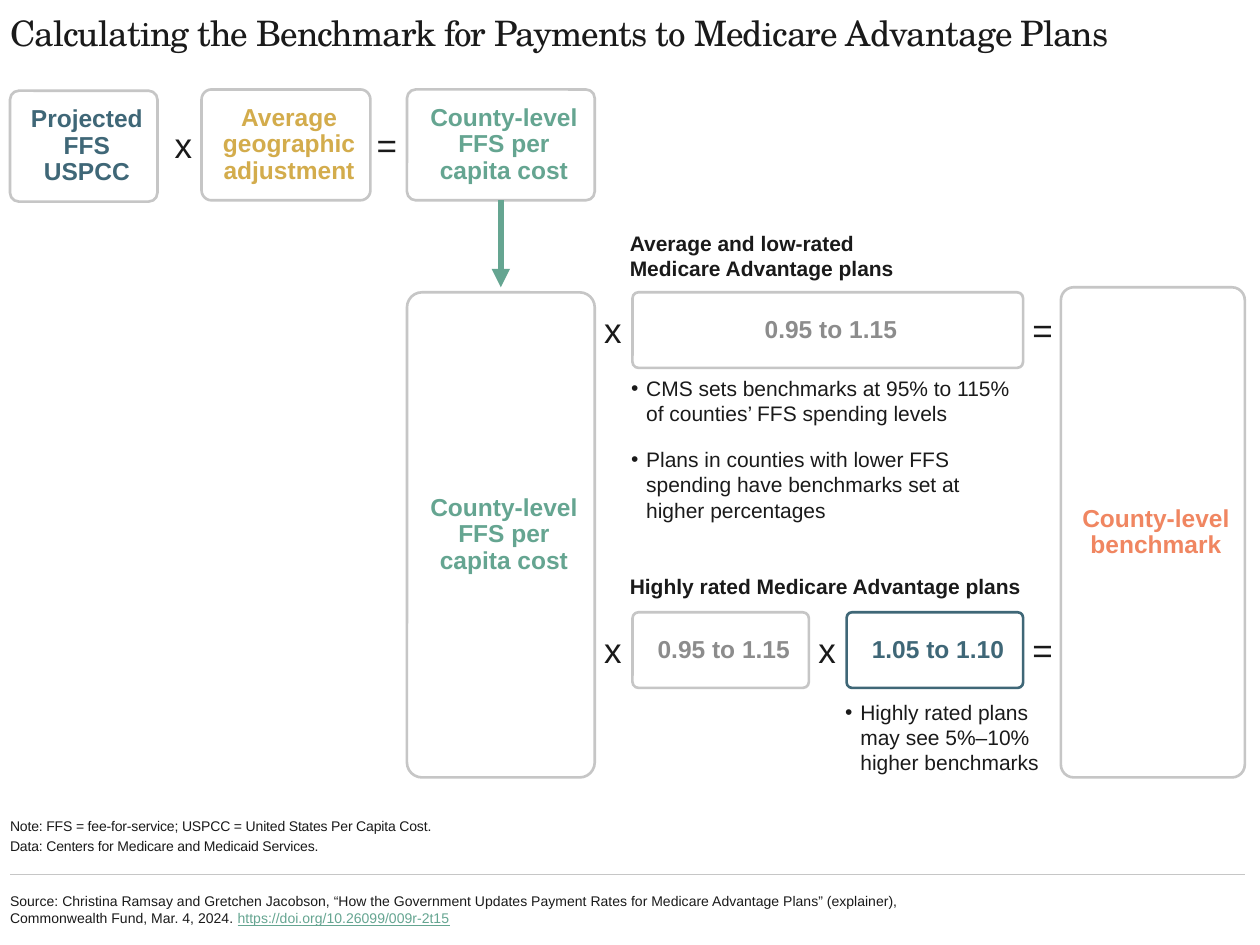
from lxml.etree import SubElement
from pptx import Presentation
from pptx.dml.color import RGBColor
from pptx.enum.shapes import MSO_CONNECTOR, MSO_SHAPE
from pptx.enum.text import MSO_ANCHOR, MSO_AUTO_SIZE, PP_ALIGN
from pptx.oxml.ns import qn
from pptx.util import Inches, Pt

INK = RGBColor(0x1A, 0x1A, 0x1A)
WHITE = RGBColor(0xFF, 0xFF, 0xFF)
RULE = RGBColor(0xC6, 0xC6, 0xC6)
GRAY = RGBColor(0x8C, 0x8C, 0x8C)
BLUE = RGBColor(0x3F, 0x67, 0x77)
GOLD = RGBColor(0xD3, 0xAC, 0x4C)
GREEN = RGBColor(0x65, 0xA5, 0x91)
ORANGE = RGBColor(0xF0, 0x86, 0x61)

LEFT, FULL_WIDTH = 0.08, 9.8
NO_MARGINS = (0, 0, 0, 0)
TEXT_MARGINS = (0.1, 0.05, 0.1, 0.05)
BOX_MARGINS = (0.12, 0.07, 0.07, 0.07)


def write(shape, texts, size, color=INK, bold=False, align=PP_ALIGN.LEFT,
          margins=TEXT_MARGINS, anchor=MSO_ANCHOR.TOP, font="Arial",
          spacing=0, bullet=False, paragraph_format=None):
    """Fill a shape with one paragraph per text and format them all."""
    frame = shape.text_frame
    left, top, right, bottom = (Inches(margin) for margin in margins)
    frame_format = {
        "word_wrap": True, "auto_size": MSO_AUTO_SIZE.NONE,
        "vertical_anchor": anchor, "margin_left": left, "margin_top": top,
        "margin_right": right, "margin_bottom": bottom,
    }
    for name, value in frame_format.items():
        setattr(frame, name, value)
    for index, text in enumerate(texts):
        paragraph = frame.paragraphs[0] if index == 0 else frame.add_paragraph()
        for name, value in {"alignment": align, **(paragraph_format or {})}.items():
            if not (index == 0 and name == "space_before"):
                setattr(paragraph, name, value)
        if bullet:
            properties = paragraph._p.get_or_add_pPr()
            properties.set("marL", str(Inches(0.13)))
            properties.set("indent", str(Inches(-0.12)))
            SubElement(properties, qn("a:buFont")).set("typeface", "Arial")
            SubElement(properties, qn("a:buChar")).set("char", "•")
        run = paragraph.add_run()
        run.text = text
        for name, value in {"name": font, "size": Pt(size), "bold": bold}.items():
            setattr(run.font, name, value)
        run.font.color.rgb = color
        if spacing:
            run._r.get_or_add_rPr().set("spc", str(round(spacing * 100)))


def add_line(start, end, color, width):
    """Draw a straight line without a shadow."""
    line = slide.shapes.add_connector(
        MSO_CONNECTOR.STRAIGHT, *(Inches(value) for value in (*start, *end)))
    line.line.color.rgb = color
    line.line.width = Pt(width)
    SubElement(line._element.spPr, qn("a:effectLst"))
    return line


presentation = Presentation()
presentation.slide_width = Inches(10)
presentation.slide_height = Inches(7.5)
slide = presentation.slides.add_slide(presentation.slide_layouts[5])

# Title
title = slide.shapes.title
title_place = {"left": LEFT, "top": 0.09, "width": FULL_WIDTH, "height": 0.47}
for name, value in title_place.items():
    setattr(title, name, Inches(value))
write(title, ["Calculating the Benchmark for Payments to Medicare Advantage Plans"],
      20, font="TeX Gyre Schola", spacing=-0.5, margins=NO_MARGINS)

# Formula boxes: place, corner, border, text, text color
COUNTY_COST = "County-level FFS per capita cost"
boxes = [
    ((LEFT, 0.72, 1.17, 0.88), 0.08, RULE, "Projected FFS USPCC", BLUE),
    ((1.6, 0.71, 1.34, 0.88), 0.09, RULE, "Average geographic adjustment", GOLD),
    ((3.23, 0.71, 1.49, 0.88), 0.08, RULE, COUNTY_COST, GREEN),
    ((3.23, 2.32, 1.49, 3.85), 0.08, RULE, COUNTY_COST, GREEN),
    ((5.02, 2.32, 3.1, 0.6), 0.08, RULE, "0.95 to 1.15", GRAY),
    ((5.02, 4.86, 1.4, 0.6), 0.08, RULE, "0.95 to 1.15", GRAY),
    ((6.72, 4.86, 1.4, 0.6), 0.07, BLUE, "1.05 to 1.10", BLUE),
    ((8.42, 2.28, 1.46, 3.89), 0.07, RULE, "County-level benchmark", ORANGE),
]
box_shapes = []
for place, corner, border, text, color in boxes:
    box = slide.shapes.add_shape(
        MSO_SHAPE.ROUNDED_RECTANGLE, *(Inches(value) for value in place))
    box.adjustments[0] = corner
    box.shadow.inherit = False
    box.fill.solid()
    box.fill.fore_color.rgb = WHITE
    box.line.color.rgb = border
    box.line.width = Pt(1.5)
    write(box, [text], 14, color, bold=True, align=PP_ALIGN.CENTER,
          margins=BOX_MARGINS, anchor=MSO_ANCHOR.MIDDLE,
          paragraph_format={"line_spacing": 0.9})
    box_shapes.append(box)

# Arrow from the county cost down to the next step
cost_box = box_shapes[2]
arrow = add_line((3.98, 1.59), (3.98, 2.28), GREEN, 3.5)
arrow.begin_connect(cost_box, 2)
arrow.end_x = cost_box.left + cost_box.width // 2
SubElement(arrow.line._get_or_add_ln(), qn("a:tailEnd")).set("type", "triangle")

# Operators between the boxes
operators = [
    ("x", 1.15, 0.93, 0.61), ("=", 2.82, 0.93, 0.5),
    ("x", 4.56, 2.4, 0.61), ("=", 7.97, 2.4, 0.61),
    ("x", 4.56, 4.94, 0.61), ("x", 6.26, 4.94, 0.61), ("=", 7.97, 4.94, 0.61),
]
for symbol, left, top, width in operators:
    operator = slide.shapes.add_textbox(
        Inches(left), Inches(top), Inches(width), Inches(0.44))
    write(operator, [symbol], 20, align=PP_ALIGN.CENTER)

# Headings and bullets
BULLET = {"bullet": True, "paragraph_format": {"space_after": Pt(12)}}
HEADING = {"bold": True}
captions = [
    ((4.9, 1.78, 2.68, 0.5), HEADING,
     ["Average and low-rated Medicare Advantage plans"]),
    ((4.9, 2.93, 3.22, 1.28), BULLET,
     ["CMS sets benchmarks at 95% to 115% of counties’ FFS spending levels",
      "Plans in counties with lower FFS spending have benchmarks set at "
      "higher percentages"]),
    ((4.9, 4.5, 3.48, 0.3), HEADING, ["Highly rated Medicare Advantage plans"]),
    ((6.6, 5.5, 1.79, 0.71), {"bullet": True},
     ["Highly rated plans may see 5%–10% higher benchmarks"]),
]
for place, style, texts in captions:
    caption = slide.shapes.add_textbox(*(Inches(value) for value in place))
    write(caption, texts, 12, **style)

# Notes
notes = slide.shapes.add_textbox(
    Inches(LEFT), Inches(6.28), Inches(FULL_WIDTH), Inches(0.5))
write(notes, ["Note: FFS = fee-for-service; USPCC = United States Per Capita Cost.",
              "Data: Centers for Medicare and Medicaid Services."],
      8, spacing=-0.1, margins=NO_MARGINS, anchor=MSO_ANCHOR.BOTTOM,
      paragraph_format={"space_before": Pt(1.6)})

# Source below a rule
add_line((LEFT, 6.94), (LEFT + FULL_WIDTH, 6.94), RULE, 0.75)
source = slide.shapes.add_textbox(
    Inches(LEFT), Inches(6.99), Inches(7.8), Inches(0.46))
write(source, ["Source: Christina Ramsay and Gretchen Jacobson, “How the Government "
               "Updates Payment Rates for Medicare Advantage Plans” (explainer), "
               "Commonwealth Fund, Mar. 4, 2024. "],
      8, margins=NO_MARGINS, anchor=MSO_ANCHOR.MIDDLE)
address = source.text_frame.paragraphs[0].add_run()
address.text = "https://doi.org/10.26099/009r-2t15"
for name, value in {"name": "Arial", "size": Pt(8), "underline": True}.items():
    setattr(address.font, name, value)
address.font.color.rgb = GREEN

presentation.save("out.pptx")
